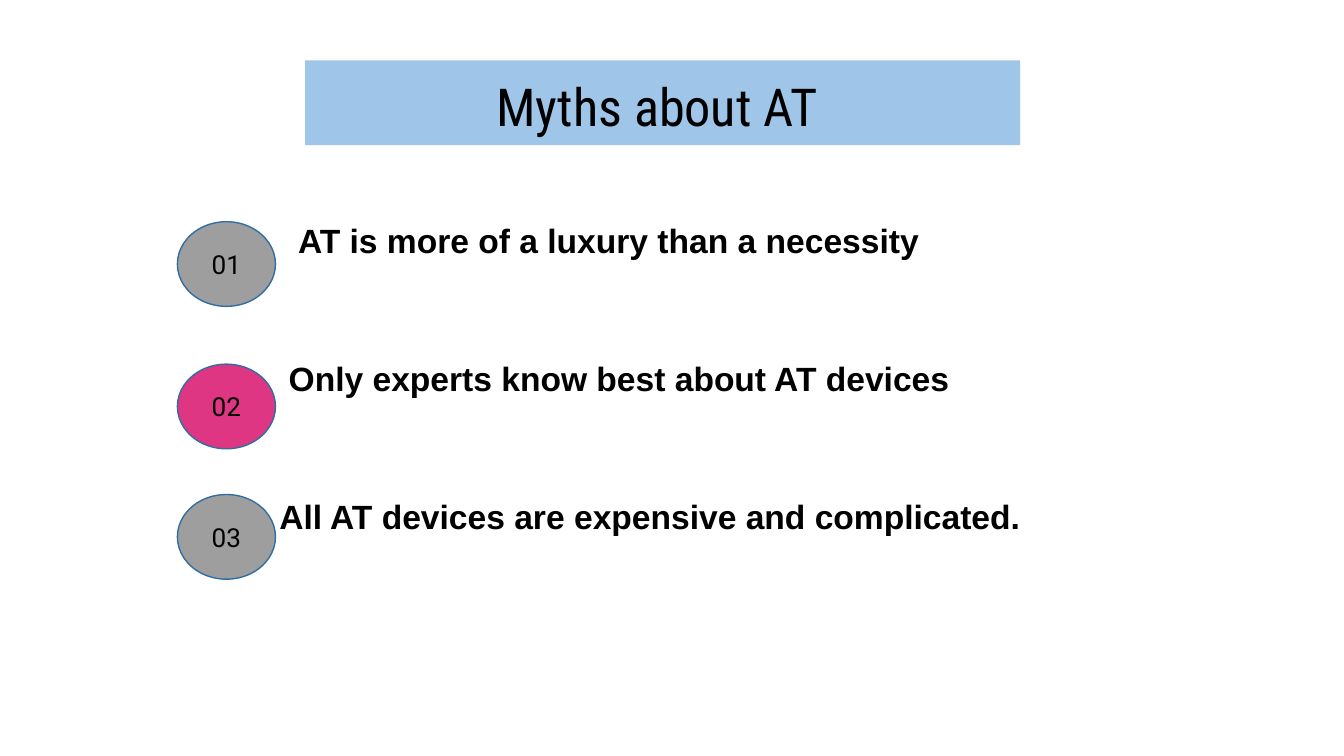
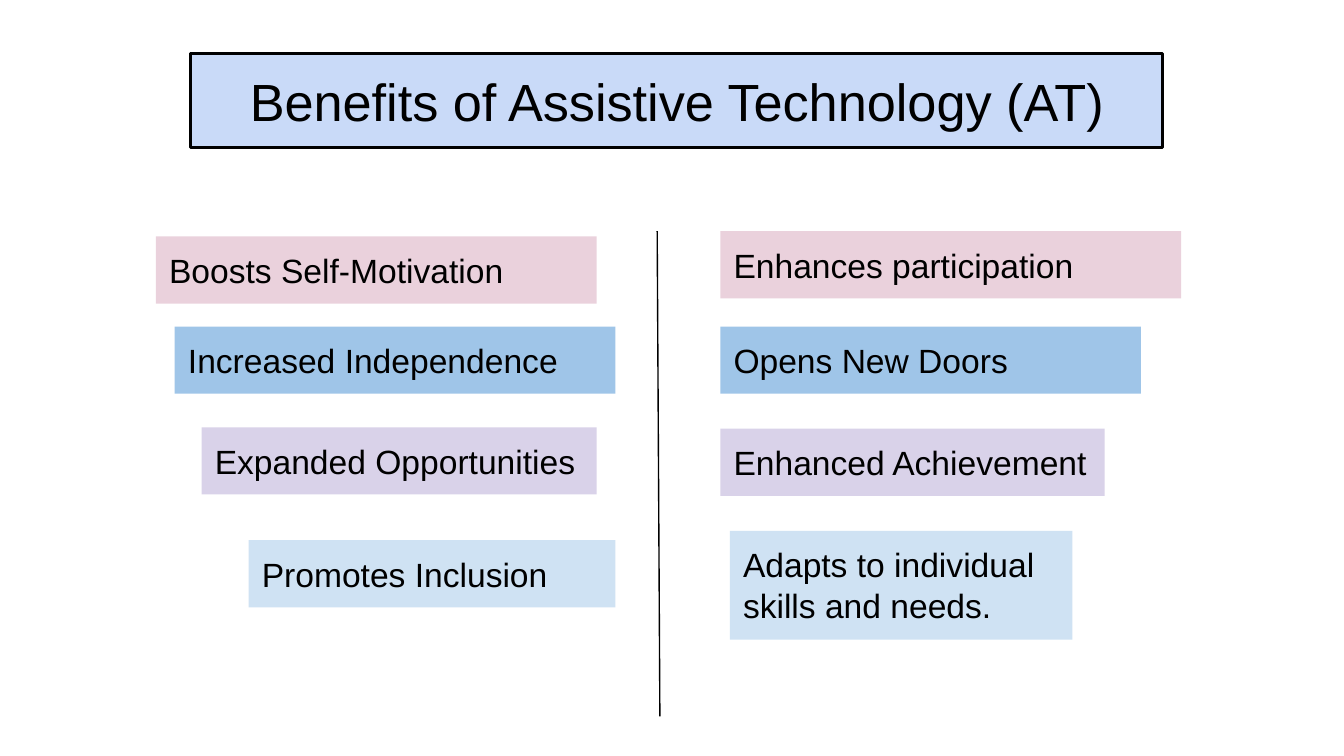
from lxml.etree import SubElement
from pptx import Presentation
from pptx.dml.color import RGBColor
from pptx.enum.shapes import MSO_CONNECTOR, MSO_SHAPE
from pptx.enum.text import MSO_ANCHOR, MSO_AUTO_SIZE, PP_ALIGN
from pptx.oxml.ns import qn
from pptx.util import Inches, Pt

BLACK = RGBColor(0x00, 0x00, 0x00)
SKY = RGBColor(0x9F, 0xC5, 0xE8)
PERIWINKLE = RGBColor(0xC9, 0xDA, 0xF8)
ROSE = RGBColor(0xEA, 0xD1, 0xDC)
LAVENDER = RGBColor(0xD9, 0xD2, 0xE9)
ICE = RGBColor(0xCF, 0xE2, 0xF3)
GREY = RGBColor(0x9E, 0x9E, 0x9E)
PINK = RGBColor(0xDF, 0x36, 0x84)
RING_BLUE = RGBColor(0x30, 0x6D, 0xA1)

FRAME = {
    "margin_left": Inches(0.1), "margin_top": Inches(0.1),
    "margin_right": Inches(0.1), "margin_bottom": Inches(0.1),
    "word_wrap": True, "auto_size": MSO_AUTO_SIZE.NONE,
}


def write(shape, lines, font, size, align=PP_ALIGN.LEFT, anchor=MSO_ANCHOR.TOP, bold=False):
    """Fill a shape with one paragraph per line, all in the same style."""
    frame = shape.text_frame
    for name, value in {**FRAME, "vertical_anchor": anchor}.items():
        setattr(frame, name, value)
    frame.text = "\n".join(lines)
    for paragraph in frame.paragraphs:
        paragraph.alignment = align
        run_font = paragraph.runs[0].font
        for name, value in {"name": font, "size": Pt(size), "bold": bold}.items():
            setattr(run_font, name, value)
        run_font.color.rgb = BLACK
    return frame


def paint(shape, fill, line=None, width=0.75):
    """Give a shape a plain fill and an optional outline."""
    shape.fill.solid()
    shape.fill.fore_color.rgb = fill
    if line is None:
        shape.line.fill.background()
    else:
        shape.line.color.rgb = line
        shape.line.width = Pt(width)


# Widescreen page, 16:9
prs = Presentation()
prs.slide_width = Inches(10)
prs.slide_height = Inches(10) * 9 // 16

# Slides and their title bands
headings = [
    ("Myths about AT ", "Roboto Condensed", (2.27, 0.45, 5.32, 0.63), SKY, None, MSO_ANCHOR.TOP),
    ("Benefits of Assistive Technology (AT)", "Arial", (1.42, 0.4, 7.23, 0.7),
     PERIWINKLE, BLACK, MSO_ANCHOR.MIDDLE),
]
slides = []
for text, font, box, fill, outline, anchor in headings:
    slide = prs.slides.add_slide(prs.slide_layouts[5])
    title = slide.shapes.title
    for name, value in zip(("left", "top", "width", "height"), box):
        setattr(title, name, Inches(value))
    paint(title, fill, outline, 1.5)
    write(title, [text], font, 28, PP_ALIGN.CENTER, anchor)
    slides.append(slide)
myths, benefits = slides

# Myths: the statements, each indented a little less than the one above
statements = [
    "AT is more of a luxury than a necessity",
    "Only experts know best about AT devices",
    "All AT devices are expensive and complicated.",
]
statement_box = myths.shapes.add_textbox(Inches(0.65), Inches(1.02), Inches(9), Inches(3.09))
statement_frame = write(statement_box, statements, "Arial", 18, bold=True)
statement_frame.margin_top = Inches(0.57)
for i, paragraph in enumerate(statement_frame.paragraphs):
    paragraph.line_spacing = 1.15
    paragraph.space_before = Pt(49 if i else 0)
    properties = paragraph._p.get_or_add_pPr()
    properties.set("marL", str(Inches(1.47 - 0.07 * i)))
    properties.set("indent", "0")

# Myths: numbered circles
for number, top, fill in (("01", 1.65, GREY), ("02", 2.71, PINK), ("03", 3.68, GREY)):
    badge = myths.shapes.add_shape(
        MSO_SHAPE.OVAL, Inches(1.32), Inches(top), Inches(0.73), Inches(0.63))
    badge.shadow.inherit = False
    paint(badge, fill, RING_BLUE)
    write(badge, [number], "Roboto", 14, PP_ALIGN.CENTER, MSO_ANCHOR.MIDDLE)

# Benefits: divider between the two columns
divider = benefits.shapes.add_connector(
    MSO_CONNECTOR.STRAIGHT, Inches(4.89), Inches(1.72), Inches(4.91), Inches(5.33))
divider.line.color.rgb = BLACK
divider.line.width = Pt(0.75)
SubElement(divider._element.spPr, qn("a:effectLst"))

# Benefits: right and left columns, sharing one colour per row
columns = [
    [("Enhances participation", 5.36, 1.72, 3.43, 0.5),
     ("Opens New Doors", 5.36, 2.43, 3.13, 0.5),
     ("Enhanced Achievement", 5.36, 3.19, 2.86, 0.5),
     ("Adapts to individual skills and needs.", 5.43, 3.95, 2.55, 0.81)],
    [("Boosts Self-Motivation", 1.16, 1.76, 3.28, 0.5),
     ("Increased Independence", 1.3, 2.43, 3.28, 0.5),
     ("Expanded Opportunities", 1.5, 3.18, 2.94, 0.5),
     ("Promotes Inclusion", 1.85, 4.02, 2.73, 0.5)],
]
for column in columns:
    for (text, *box), fill in zip(column, (ROSE, SKY, LAVENDER, ICE)):
        benefit = benefits.shapes.add_shape(MSO_SHAPE.RECTANGLE, *map(Inches, box))
        benefit.shadow.inherit = False
        paint(benefit, fill)
        write(benefit, [text], "Arial", 18)

prs.save("out.pptx")
